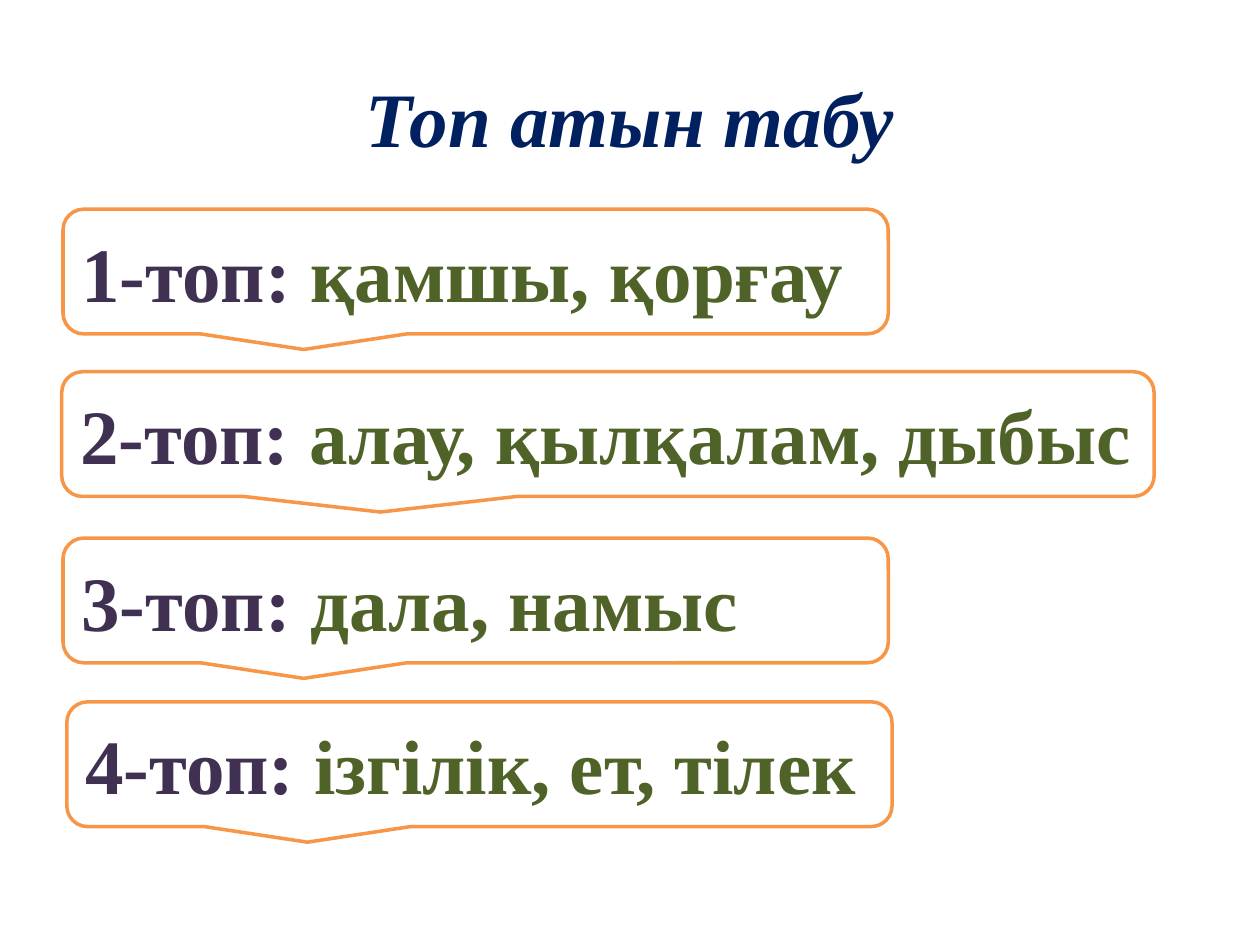
from pptx import Presentation
from pptx.dml.color import RGBColor
from pptx.enum.shapes import MSO_SHAPE
from pptx.enum.text import MSO_ANCHOR, PP_ALIGN
from pptx.util import Inches, Pt

TITLE = "Топ атын табу"
GROUPS = [
    ("1-топ: ", "қамшы, қорғау", 0.5, 1.66, 6.55),
    ("2-топ: ", "алау, қылқалам, дыбыс", 0.49, 2.95, 8.67),
    ("3-топ: ", "дала, намыс", 0.5, 4.27, 6.55),
    ("4-топ: ", "ізгілік, ет, тілек", 0.53, 5.57, 6.55),
]
CALLOUT_HEIGHT = 0.99
THEME = {
    "font": "Times New Roman",
    "size": Pt(44),
    "title": RGBColor.from_string("002060"),
    "label": RGBColor.from_string("403152"),
    "words": RGBColor.from_string("4F6228"),
    "fill": RGBColor.from_string("FFFFFF"),
    "line": RGBColor.from_string("F79646"),
    "line_width": Pt(2),
}


def format_run(run, color, italic=False):
    run.font.name = THEME["font"]
    run.font.size = THEME["size"]
    run.font.bold = True
    run.font.italic = italic
    run.font.color.rgb = THEME[color]


def add_title(slide):
    title = slide.shapes.title
    title.left, title.top = Inches(0.5), Inches(0.3)
    title.width, title.height = Inches(9), Inches(1.25)
    title.text_frame.text = TITLE
    title.text_frame.vertical_anchor = MSO_ANCHOR.MIDDLE
    paragraph = title.text_frame.paragraphs[0]
    paragraph.alignment = PP_ALIGN.CENTER
    format_run(paragraph.runs[0], "title", italic=True)


def add_group(slide, label, words, left, top, width):
    callout = slide.shapes.add_shape(
        MSO_SHAPE.ROUNDED_RECTANGULAR_CALLOUT,
        Inches(left), Inches(top), Inches(width), Inches(CALLOUT_HEIGHT),
    )
    callout.shadow.inherit = False
    callout.fill.solid()
    callout.fill.fore_color.rgb = THEME["fill"]
    callout.line.color.rgb = THEME["line"]
    callout.line.width = THEME["line_width"]
    callout.text_frame.word_wrap = True
    callout.text_frame.vertical_anchor = MSO_ANCHOR.MIDDLE
    paragraph = callout.text_frame.paragraphs[0]
    paragraph.alignment = PP_ALIGN.LEFT
    for text, color in ((label, "label"), (words, "words")):
        run = paragraph.add_run()
        run.text = text
        format_run(run, color)


def main():
    presentation = Presentation()
    presentation.slide_width = Inches(10)
    presentation.slide_height = Inches(7.5)
    slide = presentation.slides.add_slide(presentation.slide_layouts[5])
    add_title(slide)
    for group in GROUPS:
        add_group(slide, *group)
    presentation.save("out.pptx")


if __name__ == "__main__":
    main()
